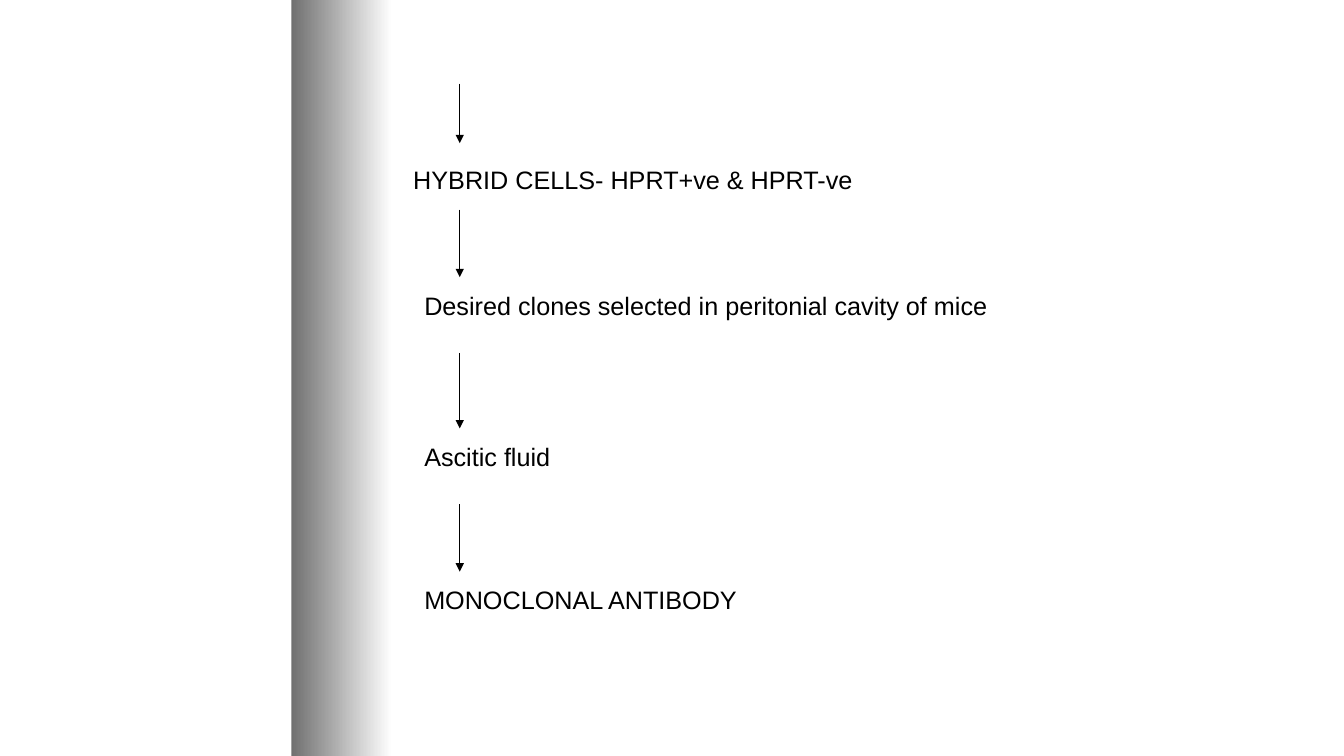
from dataclasses import dataclass

from lxml.etree import SubElement
from pptx import Presentation
from pptx.dml.color import RGBColor
from pptx.enum.shapes import MSO_CONNECTOR, MSO_SHAPE
from pptx.enum.text import MSO_AUTO_SIZE
from pptx.oxml.ns import qn
from pptx.slide import Slide
from pptx.util import Inches, Pt

COLOURS = {"text": "000000", "arrow": "000000", "band_dark": "707070", "band_light": "FFFFFF"}
ARROW_X = 4.56


@dataclass
class Step:
    text: str
    left: float
    top: float
    width: float
    arrow_top: float
    arrow_bottom: float


STEPS = [
    Step("HYBRID CELLS- HPRT+ve & HPRT-ve", 4, 1.58, 7.89, 0.83, 1.42),
    Step("Desired clones selected in peritonial cavity of mice", 4.11, 2.83, 8.11, 2.08, 2.75),
    Step("Ascitic fluid", 4.11, 4.33, 7.56, 3.5, 4.25),
    Step("MONOCLONAL ANTIBODY", 4.11, 5.75, 4.44, 5, 5.67),
]


def colour(name: str) -> RGBColor:
    return RGBColor.from_string(COLOURS[name])


def add_band(page: Slide) -> None:
    band = page.shapes.add_shape(
        MSO_SHAPE.RECTANGLE, Inches(2.89), Inches(0), Inches(1), Inches(7.5)
    )
    band.shadow.inherit = False
    band.line.fill.background()
    band.fill.gradient()
    band.fill.gradient_angle = 0
    for stop, name in zip(band.fill.gradient_stops, ("band_dark", "band_light")):
        stop.color.rgb = colour(name)


def add_arrow(page: Slide, step: Step) -> None:
    arrow = page.shapes.add_connector(
        MSO_CONNECTOR.STRAIGHT,
        Inches(ARROW_X),
        Inches(step.arrow_top),
        Inches(ARROW_X),
        Inches(step.arrow_bottom),
    )
    arrow.line.color.rgb = colour("arrow")
    arrow.line.width = Pt(0.75)
    SubElement(arrow.line._get_or_add_ln(), qn("a:tailEnd"), type="triangle")
    SubElement(arrow._element.spPr, qn("a:effectLst"))


def add_label(page: Slide, step: Step) -> None:
    box = page.shapes.add_textbox(
        Inches(step.left), Inches(step.top), Inches(step.width), Inches(0.4)
    )
    box.text_frame.word_wrap = True
    box.text_frame.auto_size = MSO_AUTO_SIZE.SHAPE_TO_FIT_TEXT
    para = box.text_frame.paragraphs[0]
    para.text = step.text
    para.font.name = "Arial"
    para.font.size = Pt(18)
    para.font.color.rgb = colour("text")


def main() -> None:
    deck = Presentation()
    deck.slide_width = Inches(13.33)
    deck.slide_height = Inches(7.5)
    page = deck.slides.add_slide(deck.slide_layouts[6])
    add_band(page)
    for step in STEPS:
        add_arrow(page, step)
        add_label(page, step)
    deck.save("out.pptx")


if __name__ == "__main__":
    main()
